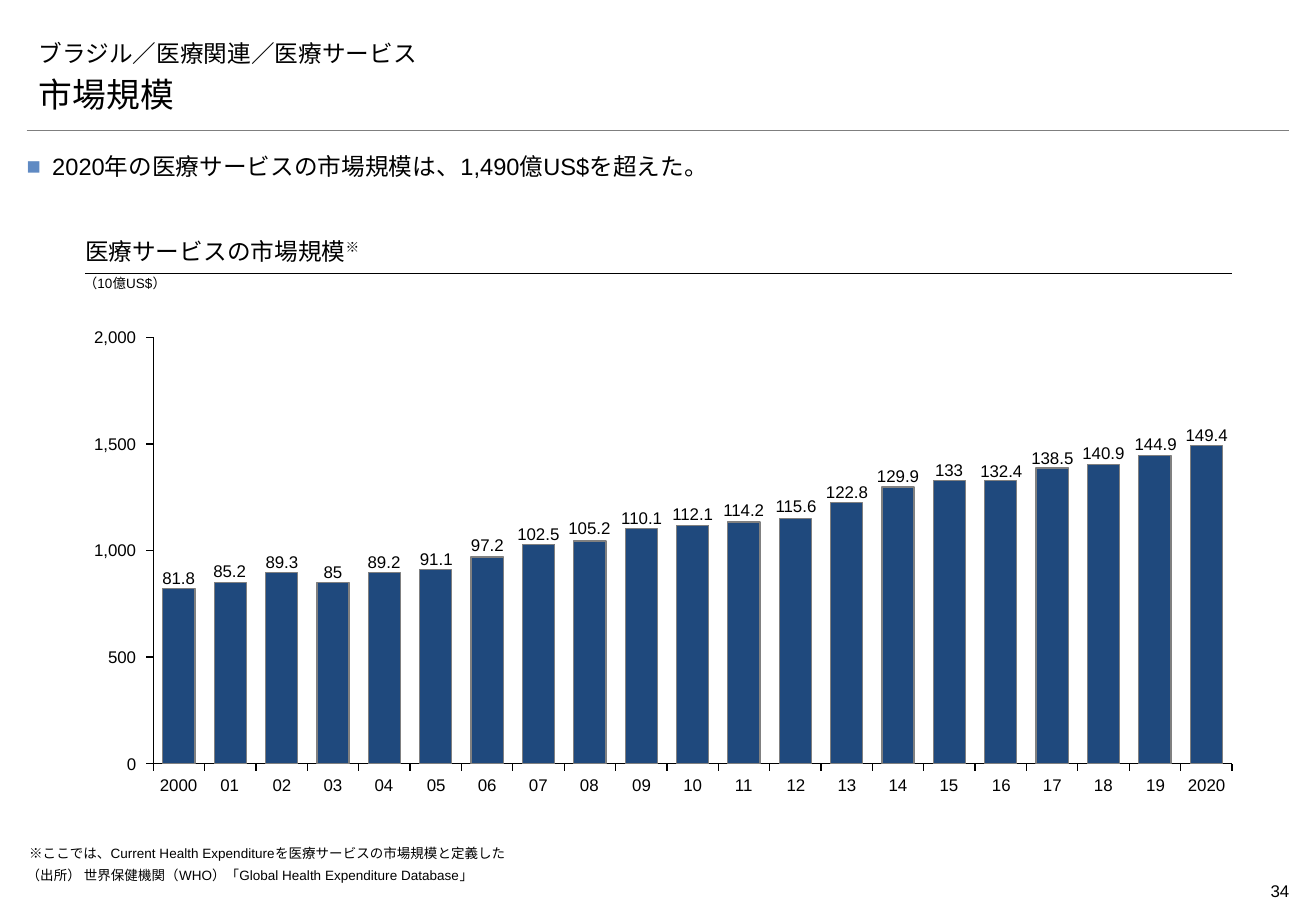
from lxml.etree import SubElement
from pptx import Presentation
from pptx.chart.data import CategoryChartData as ChartData
from pptx.dml.color import RGBColor
from pptx.enum.chart import XL_CHART_TYPE as Chart, XL_TICK_LABEL_POSITION as Label, XL_TICK_MARK as Tick
from pptx.enum.shapes import MSO_CONNECTOR as Link
from pptx.enum.text import MSO_ANCHOR as Anchor, PP_ALIGN as Align
from pptx.oxml import parse_xml
from pptx.oxml.ns import nsdecls, qn
from pptx.util import Pt

BLACK = RGBColor(0x00, 0x00, 0x00)
GRAY = RGBColor(0x7F, 0x7F, 0x7F)
EDGE = RGBColor(0x80, 0x80, 0x80)
NAVY = RGBColor(0x1F, 0x49, 0x7D)
BLUE = RGBColor(0x5F, 0x8A, 0xC3)
PX = 9144

SALES = [81.8, 85.2, 89.3, 85, 89.2, 91.1, 97.2, 102.5, 105.2, 110.1, 112.1,
         114.2, 115.6, 122.8, 129.9, 133, 132.4, 138.5, 140.9, 144.9, 149.4]
YEARS = ["2000", *(f"{year:02}" for year in range(1, 20)), "2020"]
SHARES = [round(100 * sale / SALES[-1]) for sale in SALES]
TOP, STEP = 134, 33.5
CHART = (117, 269, 906, 369)
PLOT = (0.01, 0.024, 0.98, 0.951)


class Board:
    """Draws styled elements on one slide, with lengths in px."""

    def __init__(self, deck):
        self.slide = deck.slides.add_slide(deck.slide_layouts[6])
        self.shapes = self.slide.shapes

    def text(self, box, words, size=10, font="Arial", align=Align.LEFT,
             anchor=Anchor.TOP, pad=(0, 0, 0, 0), wrap=True, note="", hang=0, dot=""):
        frame = self.shapes.add_textbox(*(round(n) * PX for n in box)).text_frame
        frame.word_wrap = wrap
        frame.vertical_anchor = anchor
        frame.margin_left, frame.margin_top, frame.margin_right, frame.margin_bottom = (
            n * PX for n in pad)
        frame.text = words
        para = frame.paragraphs[0]
        para.alignment = align
        props = para._p.get_or_add_pPr()
        if hang:
            props.set("marL", str(hang * PX))
            props.set("indent", str(-hang * PX))
        if dot:
            tint = SubElement(props, qn("a:buClr"))
            SubElement(tint, qn("a:srgbClr")).set("val", str(BLUE))
            SubElement(props, qn("a:buFont")).set("typeface", font)
            SubElement(props, qn("a:buChar")).set("char", dot)
        if note:
            mark = para.add_run()
            mark.text = note
            mark.font._element.set("baseline", "30000")
        for run in para.runs:
            run.font.size = Pt(size)
            run.font.name = font
            run.font.color.rgb = BLACK
        return para

    def line(self, left, right, top, color, width):
        rule = self.shapes.add_connector(Link.STRAIGHT, left * PX, top * PX, right * PX, top * PX)
        rule.line.color.rgb = color
        rule.line.width = Pt(width)
        SubElement(rule._element.spPr, qn("a:effectLst"))

    def axis(self, axis):
        axis.has_major_gridlines = False
        axis.major_tick_mark = Tick.OUTSIDE
        axis.minor_tick_mark = Tick.NONE
        axis.tick_label_position = Label.NONE
        axis.format.line.color.rgb = BLACK
        axis.format.line.width = Pt(0.75)

    def bars(self, box, names, values):
        data = ChartData(number_format="0")
        data.categories = names
        data.add_series("Series 1", values)
        chart = self.shapes.add_chart(Chart.COLUMN_STACKED, *(n * PX for n in box), data).chart
        chart.has_legend = chart.has_title = False
        chart.font.name = "Arial"
        chart.font.size = Pt(10)
        chart.font.color.rgb = BLACK
        self.axis(chart.category_axis)
        self.axis(chart.value_axis)
        chart.value_axis.minimum_scale = 0
        chart.value_axis.maximum_scale = TOP
        chart.value_axis.major_unit = STEP
        plot = chart.plots[0]
        plot.gap_width, plot.overlap, plot.vary_by_categories = 60, 100, False
        fmt = plot.series[0].format
        fmt.fill.solid()
        fmt.fill.fore_color.rgb = NAVY
        fmt.line.color.rgb = EDGE
        fmt.line.width = Pt(0.75)
        sides = "".join(f'<c:{tag} val="{val}"/>' for tag, val in zip("xywh", PLOT))
        layout = parse_xml(
            f'<c:layout {nsdecls("c")}><c:manualLayout><c:layoutTarget val="inner"/>'
            f'<c:xMode val="edge"/><c:yMode val="edge"/>{sides}</c:manualLayout></c:layout>')
        area = chart._chartSpace.chart.plotArea
        for old in area.findall(qn("c:layout")):
            area.remove(old)
        area.insert(0, layout)


def main():
    deck = Presentation()
    deck.slide_width, deck.slide_height = 1083 * PX, 750 * PX
    board = Board(deck)

    board.line(22, 1061, 107, GRAY, 0.25)
    board.text((983, 720, 78, 27), "34", align=Align.RIGHT, pad=(0, 5, 0, 5))
    for top, size, words in ((21, 14, "ブラジル／医療関連／医療サービス"), (60, 20, "市場規模")):
        board.text((22, top, 1039, 39), words, size, "Montserrat",
                   anchor=Anchor.BOTTOM, pad=(10, 5, 10, 5))

    lead = board.text((22, 123, 1039, 24), "2020年の医療サービスの市場規模は、1,490億US$を超えた。",
                      14, align=Align.JUSTIFY, hang=21, dot="■")
    lead.line_spacing = 1.1
    lead.space_after = Pt(2)

    board.line(70, 1014, 225, BLACK, 0.75)
    board.text((70, 195, 944, 31), "医療サービスの市場規模", 14, "Montserrat",
               anchor=Anchor.BOTTOM, pad=(0, 5, 0, 8), note="※")
    board.text((69, 225, 91, 16), "（10億US$）", 8, anchor=Anchor.MIDDLE)

    board.bars(CHART, YEARS, SHARES)
    left, top, width, height = CHART
    start, wide = left + PLOT[0] * width, PLOT[2] * width
    tall = PLOT[3] * height
    base = top + PLOT[1] * height + tall
    for tick in range(5):
        mid = base - tick * STEP / TOP * tall
        board.text((70, mid - 9, 42, 17), f"{tick * 500:,}", align=Align.RIGHT,
                   anchor=Anchor.MIDDLE, wrap=False)
    for spot, (year, sale) in enumerate(zip(YEARS, SALES)):
        mid = start + (spot + 0.5) * wide / len(YEARS)
        head = base - 100 * sale / SALES[-1] / TOP * tall
        board.text((mid - 20, 638, 40, 17), year, align=Align.CENTER, wrap=False)
        board.text((mid - 21, head - 18, 42, 17), str(sale), align=Align.CENTER,
                   anchor=Anchor.BOTTOM, wrap=False)

    board.text((24, 696, 835, 13),
               "※ここでは、Current Health Expenditureを医療サービスの市場規模と定義した", 8)
    board.text((22, 714, 614, 16),
               "（出所） 世界保健機関（WHO）「Global Health Expenditure Database」", 8, hang=49)
    deck.save("out.pptx")


if __name__ == "__main__":
    main()
